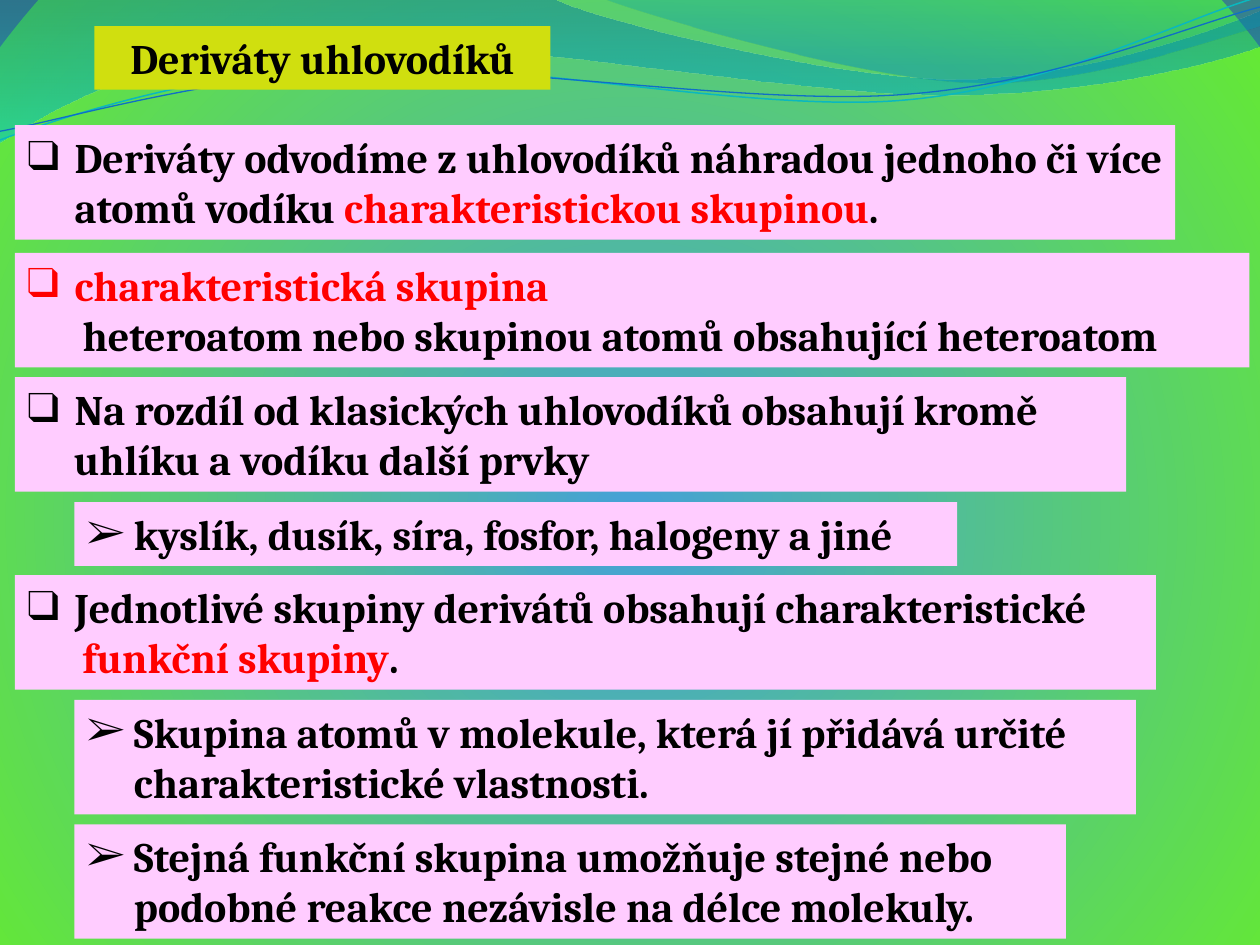
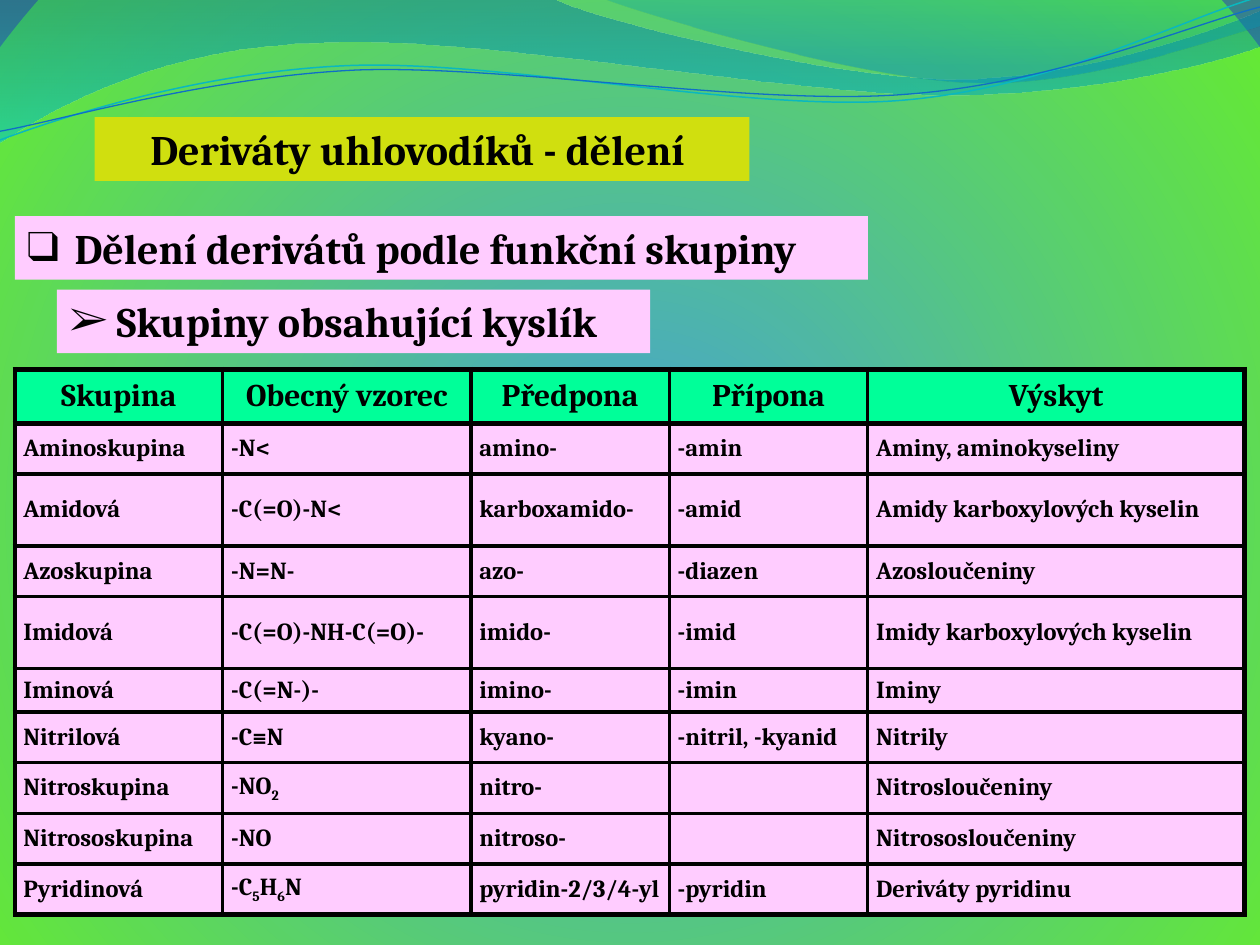
from itertools import groupby

from lxml import etree
from pptx import Presentation
from pptx.dml.color import RGBColor
from pptx.enum import shapes, text
from pptx.oxml import ns
from pptx.util import Pt

COLORS = {
    "text": "000000", "accent": "FF0000", "title": "D0DF0F", "panel": "FFCCFF",
    "header": "00FF99", "center": "45A0D8", "edge": "64E935", "corner": "52767C",
    "teal": "0AB8BF", "blue": "0F6FC6",
    "deep": "0074A1", "aqua": "00C6CF", "sea": "00A1A9", "sky": "008BBF",
}
FONT = "Cambria"
ONE_LINE, TWO_LINES = 36.35, 65.45
LEFT, HANG = 8.5, 27

BROAD_WAVE = [
    [(-0.5, 0)], [(317, -0.5)],
    [(343, 12), (478, 45), (546, 45)], [(614, 45), (690, 19), (720, 6)],
    [(720.5, 26)], [(708, 32), (626, 55), (537, 54)],
    [(449, 54), (275, 20), (185, 24)], [(93, 26), (33, 60), (-0.5, 81.5)],
]
RIGHT_WAVE = [
    [(345, -0.5)], [(366, 8), (491, 45), (554, 47)],
    [(616, 50), (692, 23), (720, 15)], [(720, 0)],
]
TEAL_CURVE = [
    [(0, 80)], [(35, 67), (114, 41), (199, 37.5)],
    [(284, 34), (427, 64), (513, 57.5)], [(600, 51), (675, 11), (718.5, -1.5)],
]
BLUE_CURVE = [
    [(0, 75)], [(34, 69), (118, 44), (204, 40)],
    [(290, 37), (430, 60.5), (516, 54)], [(602, 48), (677.5, 15), (720, 4)],
]

GROUPS = [
    ("Skupina", "Obecný vzorec", "Předpona", "Přípona", "Výskyt"),
    ("Aminoskupina", "-N<", "amino-", "-amin", "Aminy, aminokyseliny"),
    ("Amidová", "-C(=O)-N<", "karboxamido-", "-amid", "Amidy karboxylových kyselin"),
    ("Azoskupina", "-N=N-", "azo-", "-diazen", "Azosloučeniny"),
    ("Imidová", "-C(=O)-NH-C(=O)-", "imido-", "-imid", "Imidy karboxylových kyselin"),
    ("Iminová", "-C(=N-)-", "imino-", "-imin", "Iminy"),
    ("Nitrilová", "-C≡N", "kyano-", "-nitril, -kyanid", "Nitrily"),
    ("Nitroskupina", "-NO2", "nitro-", "", "Nitrosloučeniny"),
    ("Nitrososkupina", "-NO", "nitroso-", "", "Nitrososloučeniny"),
    ("Pyridinová", "-C5H6N", "pyridin-2/3/4-yl", "-pyridin", "Deriváty pyridinu"),
]


def rgb(name):
    return RGBColor.from_string(COLORS[name])


def child(parent, tag, **attrs):
    return etree.SubElement(parent, ns.qn(tag), {k: str(v) for k, v in attrs.items()})


class Deck:
    def __init__(self):
        self.prs = Presentation()
        self.prs.slide_width, self.prs.slide_height = Pt(720), Pt(540)
        self.layout = self.prs.slide_layouts[6]
        for ph in list(self.layout.placeholders):
            self.layout.shapes.element.remove(ph.element)
        master = self.prs.slide_master
        grad = self.gradient(master.background.fill, master.element,
                             [(0, "center", 100), (100, "edge", 100), (100, "corner", 100)])
        circle = child(grad, "a:path", path="circle")
        child(circle, "a:fillToRect", l=10000, t=110000, r=10000, b=100000)

    def gradient(self, fill, element, stops):
        fill.gradient()
        grad = element.find(".//" + ns.qn("a:gradFill"))
        for old in list(grad):
            grad.remove(old)
        gs_list = child(grad, "a:gsLst")
        for pos, color, alpha in stops:
            gs = child(gs_list, "a:gs", pos=pos * 1000)
            clr = child(gs, "a:srgbClr", val=COLORS[color])
            if alpha < 100:
                child(clr, "a:alpha", val=alpha * 1000)
        return grad

    def slide(self):
        self.s = self.prs.slides.add_slide(self.layout)

    def decorate_layout(self):
        self.wave(BROAD_WAVE, [(0, "deep", 45), (100, "aqua", 55)])
        self.wave(RIGHT_WAVE, [(0, "sea", 30), (80, "sky", 45)])
        self.curve(TEAL_CURVE, "teal", 0.85)
        self.curve(BLUE_CURVE, "blue", 0.75)
        for sp in list(self.s.shapes):
            self.layout.shapes.element.append(sp.element)

    def outline(self, segments, close):
        ends = [(Pt(x), Pt(y)) for x, y in (seg[-1] for seg in segments)]
        builder = self.s.shapes.build_freeform(*ends[0])
        builder.add_line_segments(ends[1:], close=close)
        sp = builder.convert_to_shape()
        sp.shadow.inherit = False
        lines = sp.element.findall(".//" + ns.qn("a:lnTo"))
        for line, seg in zip(lines, segments[1:]):
            if len(seg) == 3:
                line.tag = ns.qn("a:cubicBezTo")
                line.remove(line[0])
                for x, y in seg:
                    child(line, "a:pt", x=Pt(x) - sp.left, y=Pt(y) - sp.top)
        return sp

    def wave(self, segments, stops):
        sp = self.outline(segments, True)
        grad = self.gradient(sp.fill, sp.element, stops)
        child(grad, "a:lin", ang=5400000, scaled=0)
        sp.line.fill.background()

    def curve(self, segments, color, width):
        sp = self.outline(segments, False)
        sp.fill.background()
        sp.line.color.rgb = rgb(color)
        sp.line.width = Pt(width)

    def run(self, p, content, color="text", size=24):
        r = p.add_run()
        r.text = content
        r.font.name, r.font.size, r.font.bold = FONT, Pt(size), True
        r.font.color.rgb = rgb(color)
        return r

    def box(self, x, y, w, h, fill):
        sp = self.s.shapes.add_shape(shapes.MSO_SHAPE.RECTANGLE, Pt(x), Pt(y), Pt(w), Pt(h))
        sp.shadow.inherit = False
        sp.fill.solid()
        sp.fill.fore_color.rgb = rgb(fill)
        sp.line.fill.background()
        tf = sp.text_frame
        tf.word_wrap = True
        tf.auto_size = text.MSO_AUTO_SIZE.SHAPE_TO_FIT_TEXT
        tf.vertical_anchor = text.MSO_ANCHOR.TOP
        return tf

    def title(self, y, w, content):
        p = self.box(54, y, w, ONE_LINE, "title").paragraphs[0]
        p.alignment = text.PP_ALIGN.CENTER
        self.run(p, content)

    def point(self, x, y, w, h, bullet, runs, follow=(), follow_indent=HANG):
        tf = self.box(x, y, w, h, "panel")
        p = tf.paragraphs[0]
        self.indent(p, HANG, bullet)
        for content, color in runs:
            self.run(p, content, color)
        if follow:
            p = tf.add_paragraph()
            self.indent(p, follow_indent)
            for content, color in follow:
                self.run(p, content, color)

    def indent(self, p, left, bullet=None):
        p.alignment = text.PP_ALIGN.LEFT
        pPr = p._p.get_or_add_pPr()
        pPr.set("marL", str(Pt(left)))
        pPr.set("indent", str(Pt(-left if bullet else 0)))
        if bullet:
            child(pPr, "a:buFont", typeface=FONT)
            child(pPr, "a:buChar", char=bullet)
        else:
            child(pPr, "a:buNone")

    def topic(self, y, w, h, *args):
        self.point(LEFT, y, w, h, "❑", *args)

    def detail(self, x, y, w, h, content):
        self.point(x, y, w, h, "➢", [(content, "text")])

    def borders(self, cell, widths):
        tcPr = cell._tc.get_or_add_tcPr()
        for side, width in zip("LRTB", widths):
            ln = child(tcPr, "a:ln" + side, w=Pt(width))
            child(child(ln, "a:solidFill"), "a:srgbClr", val=COLORS["text"])

    def table(self, x, y, widths, heights, rows):
        frame = self.s.shapes.add_table(len(rows), len(widths), Pt(x), Pt(y),
                                        Pt(sum(widths)), Pt(sum(heights)))
        tbl = frame.table
        tbl.first_row = tbl.horz_banding = False
        for col, w in zip(tbl.columns, widths):
            col.width = Pt(w)
        last_row, last_col = len(rows) - 1, len(widths) - 1
        for i, row in enumerate(rows):
            tbl.rows[i].height = Pt(heights[i])
            for j, content in enumerate(row):
                cell = tbl.cell(i, j)
                heavy = (j == 0, j == last_col, i <= 1, i in (0, last_row))
                self.borders(cell, [3 if h else 2.25 for h in heavy])
                self.fill_cell(cell, content, header=i == 0, formula=j == 1)

    def fill_cell(self, cell, content, header, formula):
        cell.fill.solid()
        cell.fill.fore_color.rgb = rgb("header" if header else "panel")
        cell.vertical_anchor = text.MSO_ANCHOR.MIDDLE
        cell.margin_left = cell.margin_right = Pt(4.8)
        cell.margin_top = cell.margin_bottom = Pt(2.4)
        p = cell.text_frame.paragraphs[0]
        if header:
            p.alignment = text.PP_ALIGN.CENTER
        size = 18 if header else 14
        if not formula:
            if content:
                self.run(p, content, size=size)
            return
        for is_digit, chars in groupby(content, str.isdigit):
            r = self.run(p, "".join(chars), size=size)
            if is_digit:
                r._r.get_or_add_rPr().set("baseline", "-25000")


def definition_slide(deck):
    deck.title(15, 260.5, "Deriváty uhlovodíků")
    deck.topic(71.5, 663, TWO_LINES, [
        ("Deriváty odvodíme z uhlovodíků náhradou jednoho či více atomů vodíku ", "text"),
        ("charakteristickou skupinou", "accent"), (".", "text")])
    deck.topic(144.5, 705.5, TWO_LINES, [("charakteristická skupina", "accent")],
               [("heteroatom nebo skupinou atomů obsahující heteroatom", "text")], 31.6)
    deck.topic(215.5, 635, TWO_LINES,
               [("Na rozdíl od klasických uhlovodíků obsahují kromě", "text")],
               [("uhlíku a vodíku další prvky", "text")], 26.6)
    deck.topic(328.7, 652, TWO_LINES,
               [("Jednotlivé skupiny derivátů obsahují charakteristické", "text")],
               [("funkční skupiny", "accent"), (".", "text")], 31.6)
    deck.detail(42.5, 400, 606.6, TWO_LINES,
                "Skupina atomů v molekule, která jí přidává určité charakteristické vlastnosti.")
    deck.detail(42.5, 287, 504.5, ONE_LINE, "kyslík, dusík, síra, fosfor, halogeny a jiné")
    deck.detail(42.5, 471, 566.6, TWO_LINES,
                "Stejná funkční skupina umožňuje stejné nebo podobné reakce "
                "nezávisle na délce molekuly.")


def division_slide(deck):
    deck.title(67, 374.2, "Deriváty uhlovodíků - dělení ")
    deck.topic(123.5, 487.5, ONE_LINE, [("Dělení derivátů podle funkční skupiny", "text")])
    deck.detail(32.5, 165.5, 339, ONE_LINE, "Skupiny obsahující kyslík")
    deck.table(LEFT, 211, [118.8, 141.8, 113.4, 113.4, 215.3],
               [31, 28.8, 41.2, 28.8, 41.2, 25] + [28.9] * 4, GROUPS)


def main():
    deck = Deck()
    deck.slide()
    deck.decorate_layout()
    definition_slide(deck)
    deck.slide()
    division_slide(deck)
    deck.prs.save("out.pptx")


if __name__ == "__main__":
    main()
